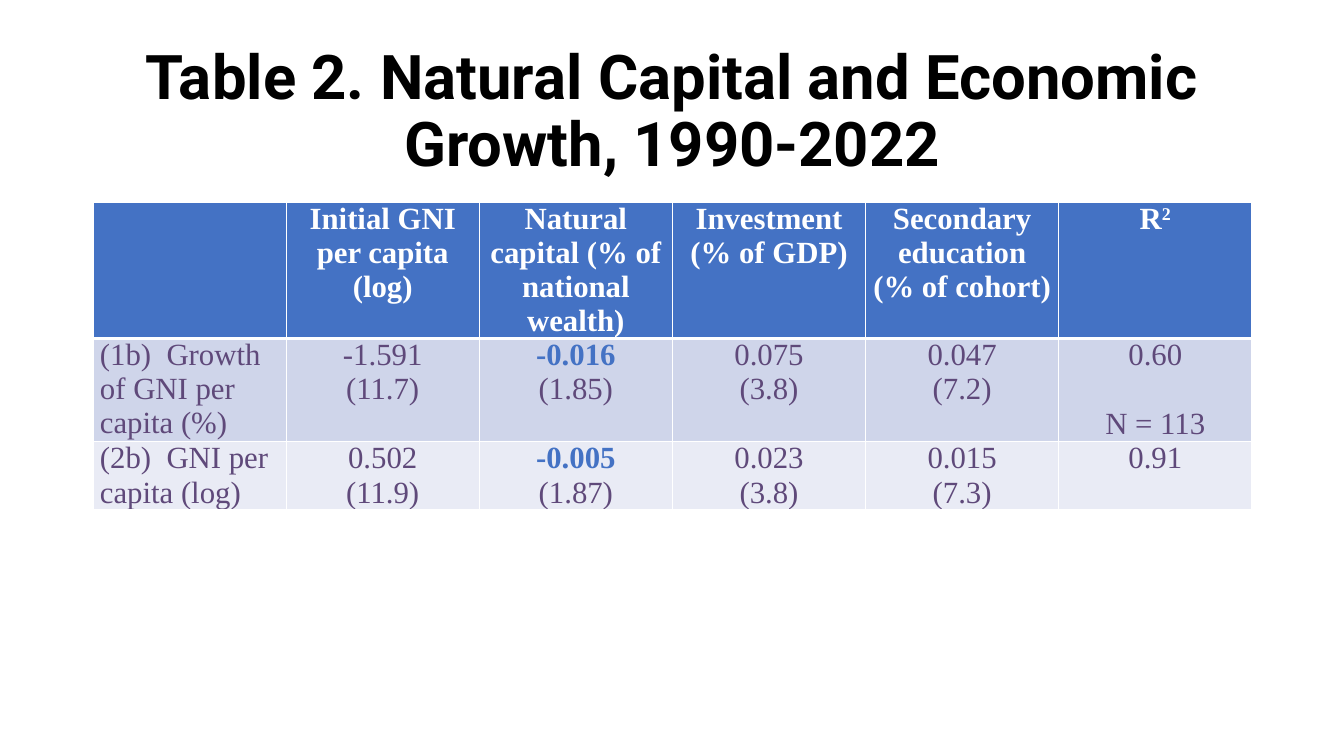
import pptx
import pptx.dml.color
import pptx.enum.text
import pptx.oxml
import pptx.oxml.ns
import pptx.util

PX = 914400 / 100.8
COLORS = {
    "black": "000000", "white": "FFFFFF", "blue": "4472C4",
    "purple": "5F497A", "odd": "CFD5EA", "even": "E9EBF5",
}
ALIGN = pptx.enum.text.PP_ALIGN
ANCHOR = pptx.enum.text.MSO_ANCHOR
TITLE = "Table 2. Natural Capital and Economic Growth, 1990-2022"
ROWS = [
    [[""], ["Initial GNI per capita (log)"], ["Natural capital (% of national wealth)"],
     ["Investment (% of GDP)"], ["Secondary education", "(% of cohort)"], ["R^2"]],
    [["(1b)  Growth of GNI per capita (%)"], ["-1.591", "(11.7)"], ["-0.016", "(1.85)"],
     ["0.075", "(3.8)"], ["0.047", "(7.2)"], ["0.60", "N = 113"]],
    [["(2b)  GNI per capita (log)"], ["0.502", "(11.9)"], ["-0.005", "(1.87)"],
     ["0.023", "(3.8)"], ["0.015", "(7.3)"], ["0.91"]],
]
ROW_HEIGHTS = [136, 102, 68]
ROW_FILLS = ["blue", "odd", "even"]
NATURAL_CAPITAL = 2


def px(length):
    return round(length * PX)


def rgb(name):
    return pptx.dml.color.RGBColor.from_string(COLORS[name])


def apply(target, values):
    for name, value in values.items():
        setattr(target, name, value)


def set_font(font, family, size, color, bold):
    apply(font, {"name": family, "size": pptx.util.Pt(size), "bold": bold})
    font.color.rgb = rgb(color)


def add_title(page, left, top, width, height):
    box = page.shapes.title
    apply(box, {"left": px(left), "top": px(top), "width": px(width), "height": px(height)})
    frame = box.text_frame
    frame.text = TITLE
    apply(frame, {"word_wrap": True, "vertical_anchor": ANCHOR.MIDDLE,
                  "auto_size": pptx.enum.text.MSO_AUTO_SIZE.NONE})
    para = frame.paragraphs[0]
    apply(para, {"alignment": ALIGN.CENTER, "line_spacing": 0.9})
    set_font(para.runs[0].font, "Roboto", 44, "black", True)


def set_borders(cell, widths):
    properties = cell._tc.get_or_add_tcPr()
    for side, width in widths.items():
        properties.append(pptx.oxml.parse_xml(
            f'<a:ln{side} {pptx.oxml.ns.nsdecls("a")} w="{pptx.util.Pt(width)}">'
            f'<a:solidFill><a:srgbClr val="{COLORS["white"]}"/></a:solidFill></a:ln{side}>'))


def write_cell(cell, lines, row, column):
    frame = cell.text_frame
    for index, line in enumerate(lines):
        para = frame.add_paragraph() if index else frame.paragraphs[0]
        para.alignment = ALIGN.LEFT if row and column == 0 else ALIGN.CENTER
        if line.startswith("N ="):
            para.space_before = pptx.util.Pt(25)
        key_value = row > 0 and column == NATURAL_CAPITAL and index == 0
        color = "white" if row == 0 else "blue" if key_value else "purple"
        base, _, power = line.partition("^")
        for text in filter(None, (base, power)):
            span = para.add_run()
            span.text = text
            set_font(span.font, "Times New Roman", 22, color, row == 0 or key_value)
            if text == power:
                span._r.get_or_add_rPr().set("baseline", "30000")


def add_results(page, left, top, width):
    table = page.shapes.add_table(len(ROWS), len(ROWS[0]), px(left), px(top),
                                  px(width), px(sum(ROW_HEIGHTS))).table
    for row, cells in enumerate(ROWS):
        table.rows[row].height = px(ROW_HEIGHTS[row])
        for column, lines in enumerate(cells):
            cell = table.cell(row, column)
            apply(cell, {"margin_left": px(7), "margin_right": px(7), "margin_top": 0,
                         "margin_bottom": 0, "vertical_anchor": ANCHOR.TOP})
            set_borders(cell, {"L": 1, "R": 1, "T": 3 if row == 1 else 1,
                               "B": 3 if row == 0 else 1})
            cell.fill.solid()
            cell.fill.fore_color.rgb = rgb(ROW_FILLS[row])
            write_cell(cell, lines, row, column)


def main():
    deck = pptx.Presentation()
    apply(deck, {"slide_width": px(1344), "slide_height": px(756)})
    page = deck.slides.add_slide(deck.slide_layouts[5])
    add_title(page, 93, 40, 1159, 146)
    add_results(page, 93, 202, 1159)
    deck.save("out.pptx")


if __name__ == "__main__":
    main()
